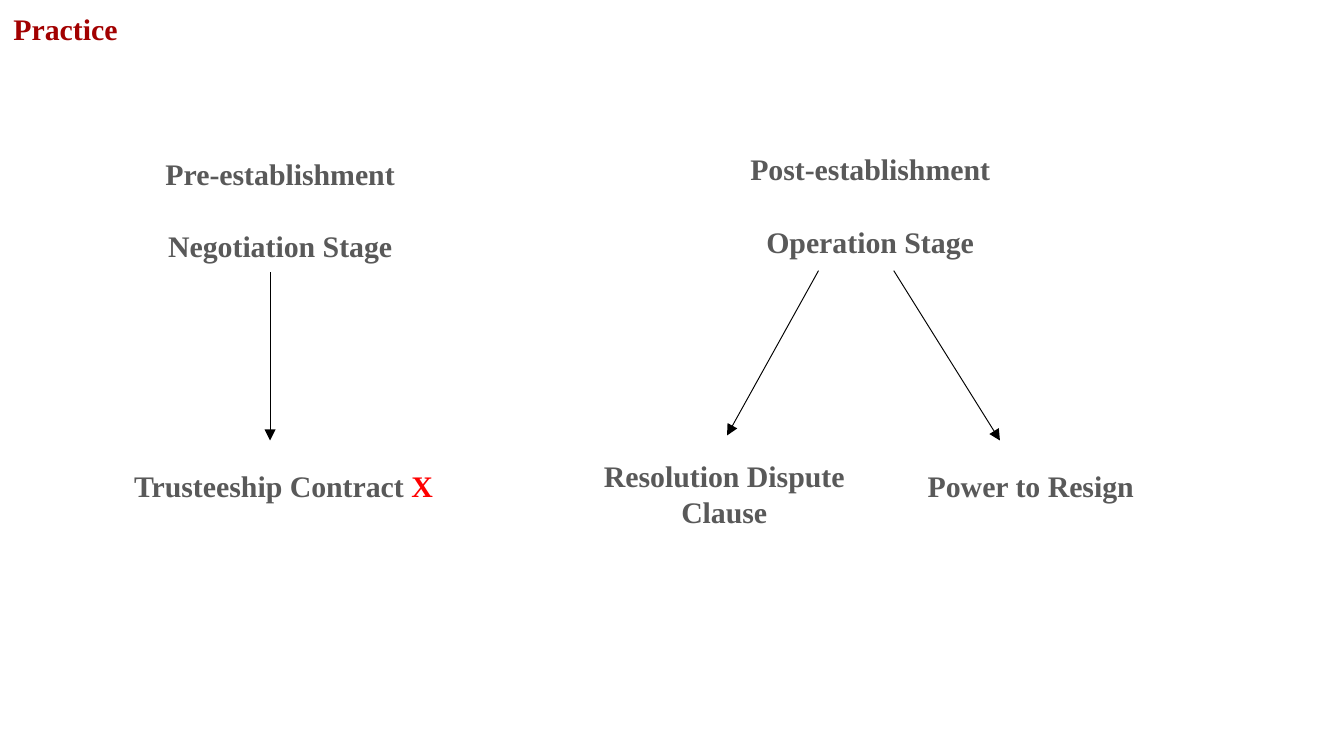
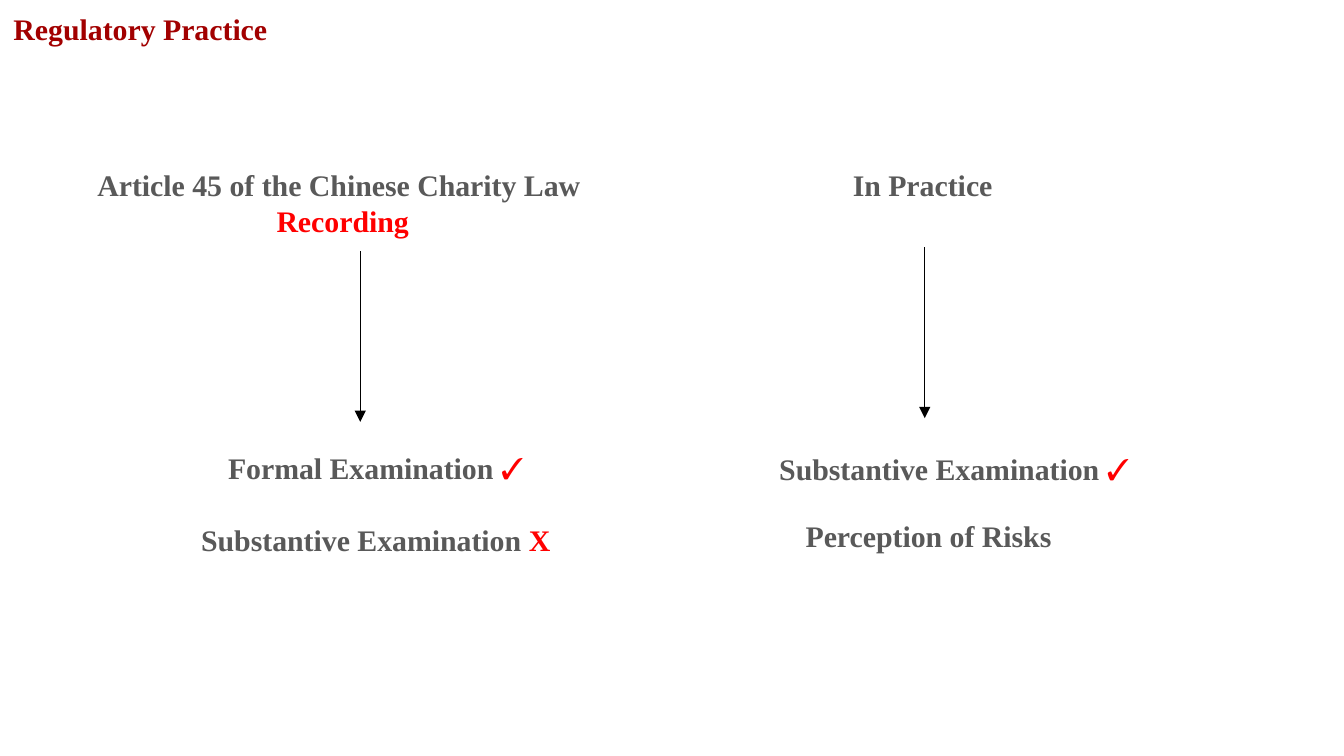
from pptx import Presentation
from pptx.dml.color import RGBColor
from pptx.enum.shapes import MSO_CONNECTOR
from pptx.enum.text import MSO_ANCHOR, MSO_AUTO_SIZE, PP_ALIGN
from pptx.oxml.ns import qn
from pptx.util import Pt
from lxml.etree import SubElement

COLORS = {"title": "A20000", "body": "595959", "mark": "FF0000", "arrow": "000000"}
FONT = {"name": "Times New Roman", "size": Pt(16), "bold": True}
FRAME = {"word_wrap": True, "auto_size": MSO_AUTO_SIZE.NONE,
         "vertical_anchor": MSO_ANCHOR.MIDDLE}
LABEL_MARGINS = {"margin_left": Pt(7.2), "margin_right": Pt(7.2),
                 "margin_top": Pt(0), "margin_bottom": Pt(0)}
LINE_HEIGHT = 19.3


def apply(target, values):
    for key, value in values.items():
        setattr(target, key, value)


class Deck:
    """Holds the shared style and the slide being built."""

    def __init__(self):
        self.prs = Presentation()
        apply(self.prs, {"slide_width": Pt(720), "slide_height": Pt(405)})
        self.slide = None

    def add_run(self, paragraph, text, color):
        run = paragraph.add_run()
        run.text = text
        apply(run.font, FONT)
        run.font.color.rgb = RGBColor.from_string(COLORS[color])

    def new_slide(self, heading):
        self.slide = self.prs.slides.add_slide(self.prs.slide_layouts[5])
        title = self.slide.shapes.title
        apply(title, {"left": Pt(0), "top": Pt(-17.3), "width": Pt(648), "height": Pt(67.7)})
        apply(title.text_frame, FRAME)
        paragraph = title.text_frame.paragraphs[0]
        apply(paragraph, {"alignment": PP_ALIGN.LEFT, "line_spacing": 0.9})
        self.add_run(paragraph, heading, "title")

    def label(self, left, middle, width, *lines, rows=1, gap=0):
        """Centred lines around a middle height; each line is a list of (text, color)."""
        height = rows * LINE_HEIGHT + gap
        box = self.slide.shapes.add_textbox(
            Pt(left), Pt(middle - height / 2), Pt(width), Pt(height))
        frame = box.text_frame
        apply(frame, FRAME | LABEL_MARGINS)
        for index, line in enumerate(lines):
            paragraph = frame.add_paragraph() if index else frame.paragraphs[0]
            apply(paragraph, {"alignment": PP_ALIGN.CENTER, "line_spacing": Pt(LINE_HEIGHT),
                              "space_before": Pt(gap if index else 0)})
            for text, color in line:
                self.add_run(paragraph, text, color)

    def arrow(self, x1, y1, x2, y2):
        connector = self.slide.shapes.add_connector(
            MSO_CONNECTOR.STRAIGHT, Pt(x1), Pt(y1), Pt(x2), Pt(y2))
        connector.line.width = Pt(0.5)
        connector.line.color.rgb = RGBColor.from_string(COLORS["arrow"])
        properties = connector.line._get_or_add_ln()
        SubElement(properties, qn("a:tailEnd"), type="triangle")
        SubElement(connector._element.spPr, qn("a:effectLst"))


def build_practice(deck):
    deck.new_slide("Practice")

    # Stages before and after establishment
    stage = {"rows": 2, "gap": LINE_HEIGHT}
    deck.label(76.3, 112.4, 147.6, [("Pre-establishment", "body")],
               [("Negotiation Stage", "body")], **stage)
    deck.label(371.5, 109.8, 189.4, [("Post-establishment", "body")],
               [("Operation Stage", "body")], **stage)

    # Outcomes
    deck.label(53.6, 260.3, 196.6, [("Trusteeship Contract", "body"), (" X", "mark")])
    deck.label(314.6, 264.6, 146.9, [("Resolution Dispute Clause", "body")], rows=2)
    deck.label(478.8, 260.3, 146.9, [("Power to Resign", "body")])

    # Arrows from stage to outcome
    for ends in ((144.7, 146, 144.7, 236), (438.5, 145, 389.5, 233.3),
                 (478.8, 145, 535.7, 236)):
        deck.arrow(*ends)


def build_regulatory_practice(deck):
    deck.new_slide("Regulatory Practice")

    # Law as written
    deck.label(44.6, 108.4, 278, [("Article 45 of the Chinese Charity Law ", "body")],
               [("Recording", "mark")], rows=2)
    deck.label(99.4, 269.7, 203.8, [("Formal Examination ", "body"), ("✓", "mark")],
               [("Substantive Examination ", "body"), ("X", "mark")],
               rows=2, gap=LINE_HEIGHT)
    deck.arrow(193, 134.6, 193, 226)

    # Law as applied
    deck.label(399.6, 99, 189.4, [("In Practice", "body")])
    deck.label(401.8, 250.7, 218.9, [("Substantive Examination", "body"), (" ✓", "mark")])
    deck.label(403.9, 287.1, 187.2, [("Perception of Risks", "body")])
    deck.arrow(495.4, 132.5, 495.4, 224)


def main():
    deck = Deck()
    build_practice(deck)
    build_regulatory_practice(deck)
    deck.prs.save("out.pptx")


if __name__ == "__main__":
    main()
